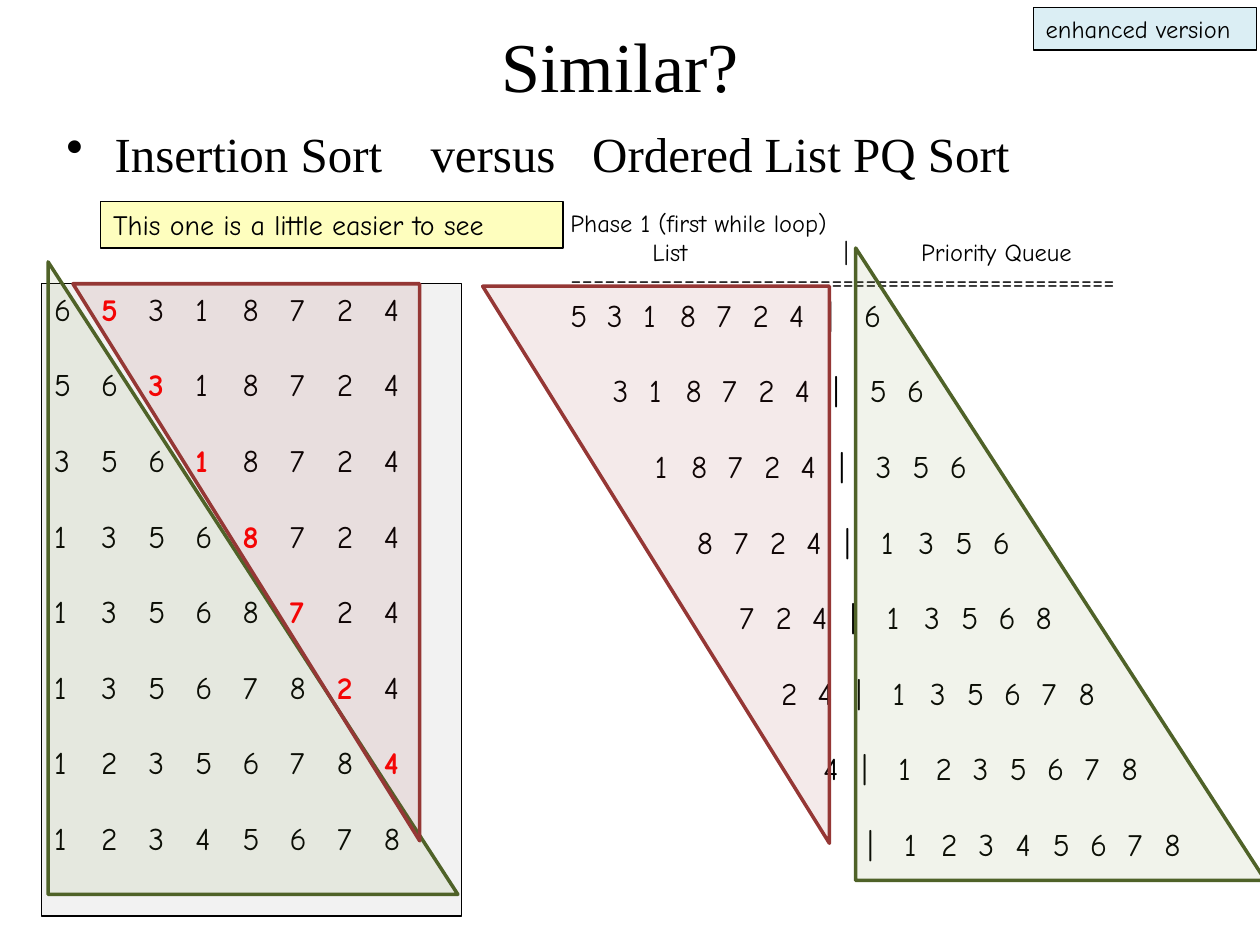
import pptx
import pptx.util
import pptx.dml.color
import pptx.enum.shapes
import pptx.enum.text
import pptx.oxml
import pptx.oxml.ns

Cm, Pt = pptx.util.Cm, pptx.util.Pt
RGB = pptx.dml.color.RGBColor
SHAPE = pptx.enum.shapes.MSO_SHAPE
ANCHOR = pptx.enum.text.MSO_ANCHOR
ALIGN = pptx.enum.text.PP_ALIGN

BLACK = RGB(0, 0, 0)
RED = RGB(0xFF, 0, 0)
GREY = RGB(0xF2, 0xF2, 0xF2)
BLUE = RGB(0xDB, 0xEE, 0xF4)
YELLOW = RGB(0xFE, 0xFE, 0xBE)
GREEN, DARK_GREEN = RGB(0x77, 0x93, 0x3C), RGB(0x4F, 0x62, 0x28)
MAROON = RGB(0x95, 0x37, 0x35)
SERIF, COMIC = "Times New Roman", "Comic Neue"

# Content
NUMBERS = [6, 5, 3, 1, 8, 7, 2, 4]
TITLE = "Similar?"
BULLET = ["Insertion Sort", "versus", "Ordered List PQ Sort"]
BULLET_TABS = [0.97, 7.34, 10.6]
PHASE = "Phase 1 (first while loop)"
HEADINGS = ["List", "|", "Priority Queue"]
HEADING_TABS = [1.65, 5.51, 7.07]
# Left, top, width, height in cm, then text, size, fill
LABELS = [
    ((20.83, 0.15, 4.5, 0.86), "enhanced version", 14, BLUE),
    ((2.03, 4.06, 9.32, 0.94), "This one is a little easier to see", 16, YELLOW),
]
# Left, top, width, height in cm, then rotation, fill, line
TRIANGLES = [
    ((0.97, 5.28, 8.26, 12.75), 0, GREEN, DARK_GREEN),
    ((17.25, 5.0, 8.26, 12.75), 0, GREEN, DARK_GREEN),
    ((1.47, 5.72, 6.99, 11.23), 180, MAROON, MAROON),
    ((9.73, 5.77, 6.99, 11.23), 180, MAROON, MAROON),
]

# Column rules in cm
SORT_PITCH = 0.95
LIST_PITCH, QUEUE_PITCH = 0.735, 0.75
BAR_X, QUEUE_X, ROW_SHIFT = 5.18, 5.92, 0.115
ROW_GAP = Pt(21.6)

prs = pptx.Presentation()
prs.slide_width, prs.slide_height = Cm(25.4), Cm(19.05)
s = prs.slides.add_slide(prs.slide_layouts[6])


def add_box(box, fill=None):
    sp = s.shapes.add_textbox(*map(Cm, box))
    sp.text_frame.word_wrap = True
    if fill is not None:
        sp.fill.solid()
        sp.fill.fore_color.rgb = fill
        sp.line.color.rgb = BLACK
        sp.line.width = Pt(0.75)
    return sp.text_frame


def next_paragraph(tf):
    p = tf.paragraphs[0]
    return tf.add_paragraph() if p.runs else p


def add_run(p, text, size, font=COMIC, color=BLACK, bold=False):
    r = p.add_run()
    r.text = text
    r.font.size, r.font.name, r.font.bold = Pt(size), font, bold
    r.font.color.rgb = color


def add_element(parent, tag, **attrs):
    el = pptx.oxml.ns.qn(tag)
    el = parent.makeelement(el, {k: str(v) for k, v in attrs.items()})
    parent.append(el)
    return el


def set_tabs(p, stops):
    tabs = add_element(p._p.get_or_add_pPr(), "a:tabLst")
    for stop in stops:
        add_element(tabs, "a:tab", pos=int(Cm(stop)), algn="l")


# Title and bullet
tf = add_box((1.07, 0.2, 22.86, 2.21))
tf.vertical_anchor = ANCHOR.MIDDLE
p = tf.paragraphs[0]
p.alignment = ALIGN.CENTER
add_run(p, TITLE, 40, SERIF)

p = add_box((1.09, 2.36, 22.86, 1.7)).paragraphs[0]
p.space_before = Pt(5.6)
add_element(p._p.get_or_add_pPr(), "a:buChar", char="•")
set_tabs(p, BULLET_TABS)
add_run(p, "\t" + "\t".join(BULLET), 28, SERIF)

# Priority queue sort: remaining list, bar, ordered queue
tf = add_box((11.25, 4.06, 13.2, 13.6))
add_run(next_paragraph(tf), PHASE, 14)
p = next_paragraph(tf)
set_tabs(p, HEADING_TABS)
add_run(p, "\t" + "\t".join(HEADINGS), 14)
add_run(next_paragraph(tf), "=" * 48, 14)

for row in range(len(NUMBERS)):
    done = row + 1
    cells = NUMBERS[done:] + ["|"] + sorted(NUMBERS[:done])
    stops = [LIST_PITCH * i for i in range(row, len(NUMBERS) - 1)]
    stops += [BAR_X] + [QUEUE_X + QUEUE_PITCH * i for i in range(done)]
    p = next_paragraph(tf)
    if row:
        p.space_before = ROW_GAP
    set_tabs(p, [x + ROW_SHIFT * row for x in stops if x > 0])
    add_run(p, ("\t" if row else "") + "\t".join(map(str, cells)), 18)

# Small labels
add_label = [(add_box(box, fill), text, size) for box, text, size, fill in LABELS[:1]]

# Insertion sort: the next number to insert is red
tf = add_box((0.84, 5.72, 8.46, 12.75), GREY)
for done in range(1, len(NUMBERS) + 1):
    p = next_paragraph(tf)
    if done > 1:
        p.space_before = ROW_GAP
    set_tabs(p, [SORT_PITCH * i for i in range(1, len(NUMBERS))])
    for i, n in enumerate(sorted(NUMBERS[:done]) + NUMBERS[done:]):
        current = i == done
        add_run(p, ("\t" if i else "") + str(n), 18,
                color=RED if current else BLACK, bold=current)

add_label += [(add_box(box, fill), text, size) for box, text, size, fill in LABELS[1:]]
for tf, text, size in add_label:
    add_run(tf.paragraphs[0], text, size)

# Triangles over the sorted and unsorted parts
for box, rotation, fill, line in TRIANGLES:
    sp = s.shapes.add_shape(SHAPE.RIGHT_TRIANGLE, *map(Cm, box))
    sp.shadow.inherit = False
    sp.rotation = rotation
    sp.fill.solid()
    sp.fill.fore_color.rgb = fill
    color = sp.fill._xPr.find(".//" + pptx.oxml.ns.qn("a:srgbClr"))
    add_element(color, "a:alpha", val=10000)
    sp.line.color.rgb = line
    sp.line.width = Pt(2)

prs.save("out.pptx")
